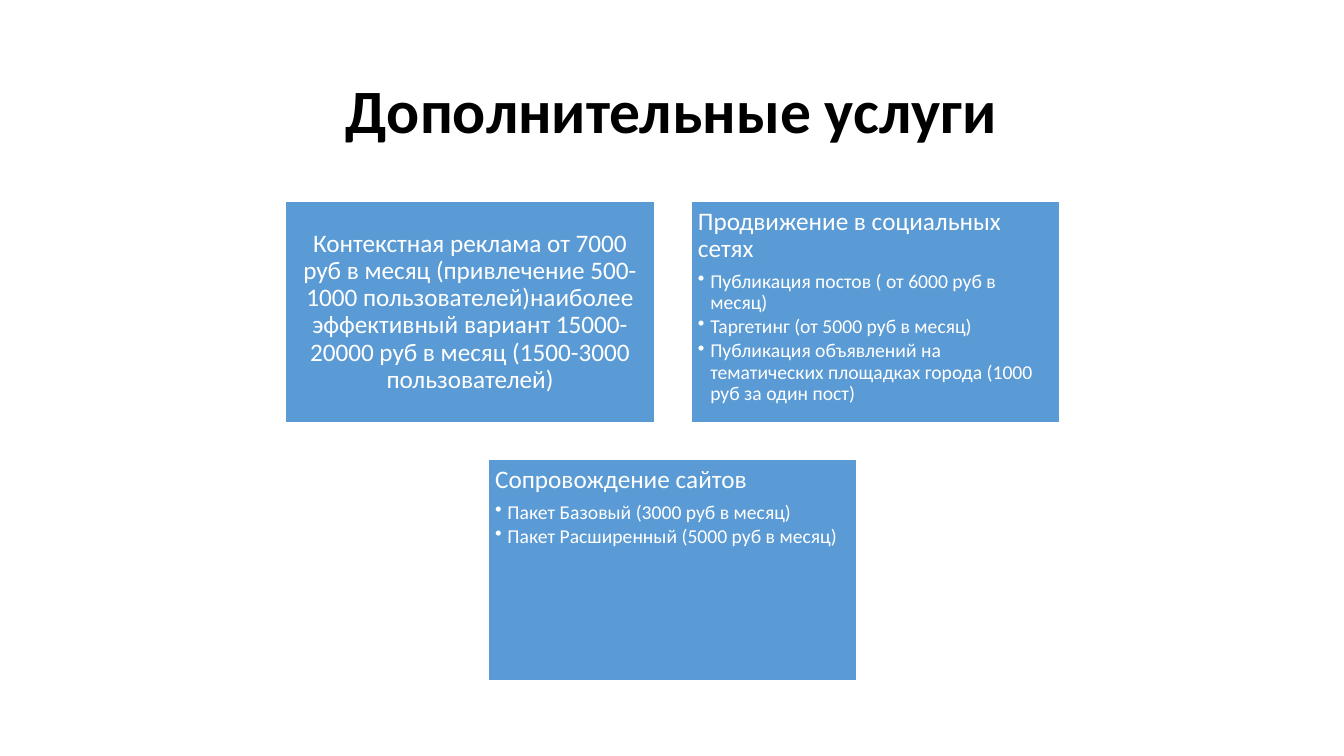
from lxml import etree
from pptx import Presentation
from pptx import util as u
from pptx.dml.color import RGBColor
from pptx.enum import shapes, text
from pptx.oxml.ns import qn

BLACK = RGBColor(0x00, 0x00, 0x00)
WHITE = RGBColor(0xFF, 0xFF, 0xFF)
BLUE = RGBColor(0x5B, 0x9B, 0xD5)

# Card grid, in centimetres
CARD_W, CARD_H, GAP = 9.29, 5.57, 0.93
GRID_LEFT, GRID_TOP = 7.2, 5.08


class ServicesSlide:
    font_name = "Calibri"
    heading_size, item_size = 18, 14
    card_margin = u.Cm(0.17)
    bullet_indent = u.Cm(0.31)

    def __init__(self, deck):
        self.slide = deck.slides.add_slide(deck.slide_layouts[5])

    def style_paragraph(self, paragraph, size, color, align, bold=False):
        paragraph.alignment = align
        paragraph.line_spacing = 0.9
        for run in paragraph.runs:
            run.font.name = self.font_name
            run.font.size = u.Pt(size)
            run.font.bold = bold
            run.font.color.rgb = color

    def title(self, wording):
        title = self.slide.shapes.title
        title.left, title.top = u.Cm(2.33), u.Cm(1.01)
        title.width, title.height = u.Cm(29.21), u.Cm(3.68)
        frame = title.text_frame
        frame.text = wording
        frame.vertical_anchor = text.MSO_ANCHOR.MIDDLE
        self.style_paragraph(frame.paragraphs[0], 44, BLACK,
                             text.PP_ALIGN.CENTER, bold=True)

    def bullet(self, paragraph):
        paragraph.level = 1
        properties = paragraph._p.get_or_add_pPr()
        properties.set("marL", str(self.bullet_indent))
        properties.set("indent", str(-self.bullet_indent))
        etree.SubElement(properties, qn("a:buChar")).set("char", "•")

    def card(self, column, row, heading, items):
        left = GRID_LEFT + column * (CARD_W + GAP)
        top = GRID_TOP + row * (CARD_H + GAP)
        card = self.slide.shapes.add_shape(
            shapes.MSO_SHAPE.RECTANGLE,
            u.Cm(left), u.Cm(top), u.Cm(CARD_W), u.Cm(CARD_H))
        card.shadow.inherit = False
        card.fill.solid()
        card.fill.fore_color.rgb = BLUE
        card.line.color.rgb = WHITE
        card.line.width = u.Pt(1)

        # A card with items is a top-aligned list, otherwise its text is centred
        frame = card.text_frame
        frame.word_wrap = True
        frame.margin_left = frame.margin_right = self.card_margin
        frame.margin_top = frame.margin_bottom = self.card_margin
        frame.vertical_anchor = (text.MSO_ANCHOR.TOP if items
                                 else text.MSO_ANCHOR.MIDDLE)
        align = text.PP_ALIGN.LEFT if items else text.PP_ALIGN.CENTER
        frame.text = heading
        heading_line = frame.paragraphs[0]
        self.style_paragraph(heading_line, self.heading_size, WHITE, align)
        heading_line.space_after = u.Pt(6.3)
        for item in items:
            item_line = frame.add_paragraph()
            item_line.text = item
            self.style_paragraph(item_line, self.item_size, WHITE, align)
            item_line.space_after = u.Pt(2.1)
            self.bullet(item_line)


# Column, row, heading, items; the last card is centred under the first two
SERVICES = [
    (0, 0, "Контекстная реклама от 7000 руб в месяц (привлечение 500-1000 "
           "пользователей)наиболее эффективный вариант 15000-20000 руб в месяц "
           "(1500-3000 пользователей)", []),
    (1, 0, "Продвижение в социальных сетях", [
        "Публикация постов ( от 6000 руб в месяц)",
        "Таргетинг (от 5000 руб в месяц)",
        "Публикация объявлений на тематических площадках города "
        "(1000 руб за один пост)"]),
    (0.5, 1, "Сопровождение сайтов", [
        "Пакет Базовый (3000 руб в месяц)",
        "Пакет Расширенный (5000 руб в месяц)"]),
]


def main():
    deck = Presentation()
    deck.slide_width, deck.slide_height = u.Cm(33.87), u.Cm(19.05)
    services = ServicesSlide(deck)
    services.title("Дополнительные услуги")
    for service in SERVICES:
        services.card(*service)
    deck.save("out.pptx")


if __name__ == "__main__":
    main()
